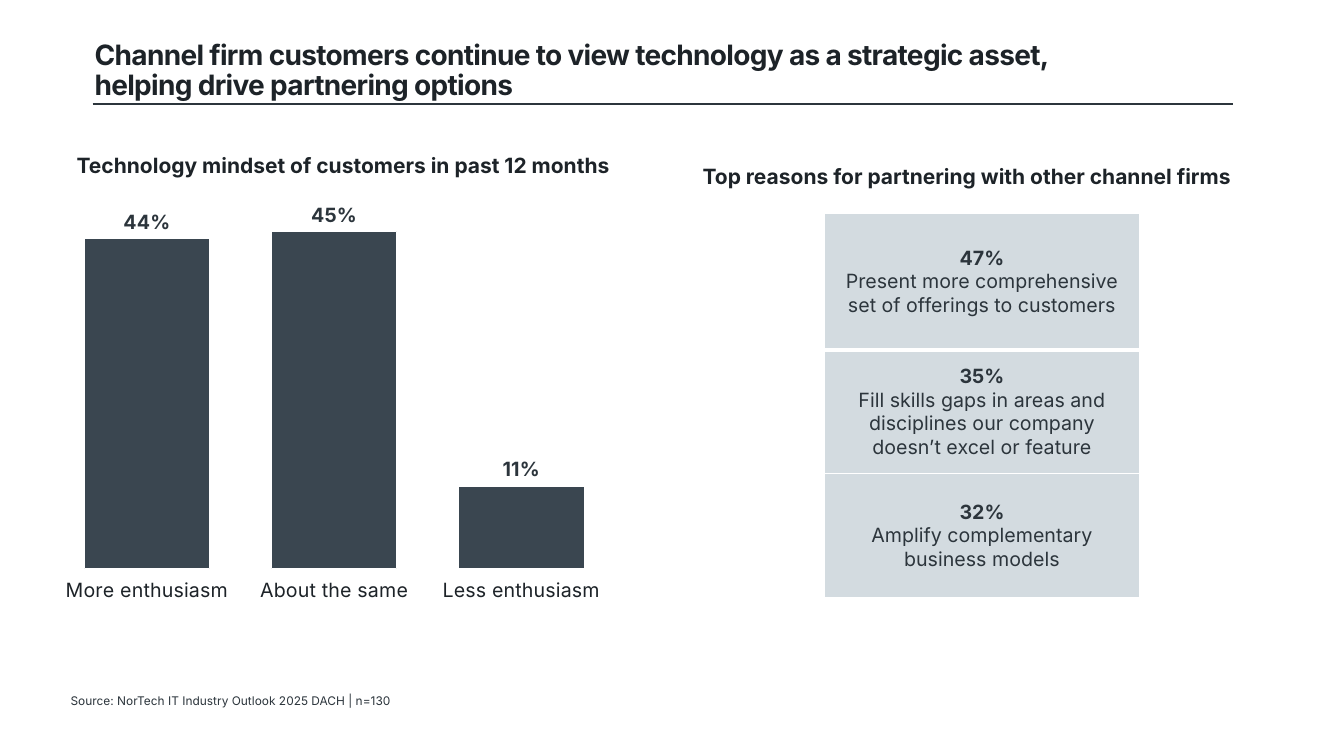
import pptx
import pptx.chart.data
import pptx.dml.color
import pptx.enum.chart
import pptx.enum.shapes
import pptx.enum.text
import pptx.oxml
import pptx.oxml.ns
import pptx.util
from lxml import etree

Inches = pptx.util.Inches
Pt = pptx.util.Pt
RGB = pptx.dml.color.RGBColor.from_string
qn = pptx.oxml.ns.qn
ALIGN = pptx.enum.text.PP_ALIGN
ANCHOR = pptx.enum.text.MSO_ANCHOR
COLORS = {"ink": "1D2328", "slate": "2C353C", "bar": "3A4650",
          "panel": "D3DBE0", "white": "FFFFFF"}
FONT = "Inter"

prs = pptx.Presentation()
prs.slide_width = Inches(13.33)
prs.slide_height = Inches(7.5)
slide = prs.slides.add_slide(prs.slide_layouts[6])


def write(p, text, size=14, color="slate", bold=False, align=ALIGN.LEFT, spacing=None):
    p.alignment = align
    r = p.add_run()
    r.text = text
    r.font.name = FONT
    r.font.size = Pt(size)
    r.font.bold = bold
    r.font.color.rgb = RGB(COLORS[color])
    if spacing is not None:
        r.font._element.set("spc", str(int(spacing * 100)))


def add_box(left, top, width, height, anchor=ANCHOR.TOP):
    tf = slide.shapes.add_textbox(
        Inches(left), Inches(top), Inches(width), Inches(height)).text_frame
    tf.word_wrap = True
    tf.vertical_anchor = anchor
    return tf


tf = add_box(0.84, 0.36, 10.16, 0.7, ANCHOR.MIDDLE)
tf.paragraphs[0].line_spacing = 0.9
write(tf.paragraphs[0],
      "Channel firm customers continue to view technology as a strategic asset, "
      "helping drive partnering options",
      size=20, color="ink", bold=True, spacing=-0.5)

rule = slide.shapes.add_connector(
    pptx.enum.shapes.MSO_CONNECTOR.STRAIGHT,
    Inches(0.92), Inches(1.03), Inches(12.23), Inches(1.03))
rule.line.color.rgb = RGB(COLORS["slate"])
rule.line.width = Pt(1)
etree.SubElement(rule._element.spPr, qn("a:effectLst"))

tf = add_box(0.7, 6.85, 7, 0.2, ANCHOR.MIDDLE)
tf.margin_left = tf.margin_top = tf.margin_right = tf.margin_bottom = 0
write(tf.paragraphs[0], "Source: NorTech IT Industry Outlook 2025 DACH | n=130", size=8.5)

headings = [
    (0.53, 1.46, 5.75, "Technology mindset of customers in past 12 months"),
    (6.74, 1.57, 5.7, "Top reasons for partnering with other channel firms"),
]
for left, top, width, text in headings:
    tf = add_box(left, top, width, 0.35)
    write(tf.paragraphs[0], text, size=15, color="ink", bold=True, align=ALIGN.CENTER)

data = pptx.chart.data.CategoryChartData(number_format="0%")
data.categories = ["More enthusiasm", "About the same", "Less enthusiasm"]
data.add_series("Series 1", (0.44, 0.45, 0.11))
chart = slide.shapes.add_chart(
    pptx.enum.chart.XL_CHART_TYPE.COLUMN_CLUSTERED,
    Inches(0.53), Inches(2.01), Inches(5.57), Inches(4.54), data).chart
chart.has_legend = False
chart.has_title = False
chart.font.name = FONT
chart.font.size = Pt(14)
chart.font.color.rgb = RGB(COLORS["ink"])

chart.category_axis.format.line.fill.background()
chart.category_axis.has_major_gridlines = False
chart.value_axis.visible = False
chart.value_axis.has_major_gridlines = False
chart.value_axis.minimum_scale = 0
chart.value_axis.maximum_scale = 0.47

plot = chart.plots[0]
plot.gap_width = 49
plot.vary_by_categories = False
series = plot.series[0]
series.format.fill.solid()
series.format.fill.fore_color.rgb = RGB(COLORS["bar"])
series.format.line.color.rgb = RGB(COLORS["white"])
series.format.line.width = Pt(0.75)

labels = series.data_labels
labels.show_value = True
labels.position = pptx.enum.chart.XL_LABEL_POSITION.OUTSIDE_END
labels.number_format = "0%"
labels.number_format_is_linked = False
labels.font.name = FONT
labels.font.size = Pt(14)
labels.font.bold = True
labels.font.color.rgb = RGB(COLORS["slate"])

plot_area = chart._chartSpace.chart.plotArea
for old in plot_area.findall(qn("c:layout")):
    plot_area.remove(old)
layout = etree.Element(qn("c:layout"))
manual = etree.SubElement(layout, qn("c:manualLayout"))
for tag, val in [("layoutTarget", "inner"), ("xMode", "edge"), ("yMode", "edge"),
                 ("x", "0"), ("y", "0.03"), ("w", "1"), ("h", "0.77")]:
    etree.SubElement(manual, qn("c:" + tag)).set("val", val)
plot_area.insert(0, layout)

reasons = [
    ("47%", "Present more comprehensive set of offerings to customers", 1.35),
    ("35%", "Fill skills gaps in areas and disciplines our company doesn’t excel or feature", 1.23),
    ("32%", "Amplify complementary business models", 1.23),
]
table = slide.shapes.add_table(
    len(reasons), 1, Inches(8.18), Inches(2.12), Inches(3.12), Inches(3.81)).table
table.first_row = False
table.horz_banding = False
for i, (share, reason, height) in enumerate(reasons):
    table.rows[i].height = Inches(height)
    cell = table.cell(i, 0)
    cell.vertical_anchor = ANCHOR.MIDDLE
    tf = cell.text_frame
    write(tf.paragraphs[0], share, bold=True, align=ALIGN.CENTER)
    write(tf.add_paragraph(), reason, align=ALIGN.CENTER)
    tcPr = cell._tc.get_or_add_tcPr()
    widths = {"lnL": 1, "lnR": 1, "lnT": 3 if i == 1 else 1, "lnB": 3 if i == 0 else 1}
    for side, width in widths.items():
        ln = etree.SubElement(tcPr, qn("a:" + side), w=str(Pt(width)))
        fill = etree.SubElement(ln, qn("a:solidFill"))
        etree.SubElement(fill, qn("a:srgbClr"), val=COLORS["white"])
    cell.fill.solid()
    cell.fill.fore_color.rgb = RGB(COLORS["panel"])

prs.save("out.pptx")
